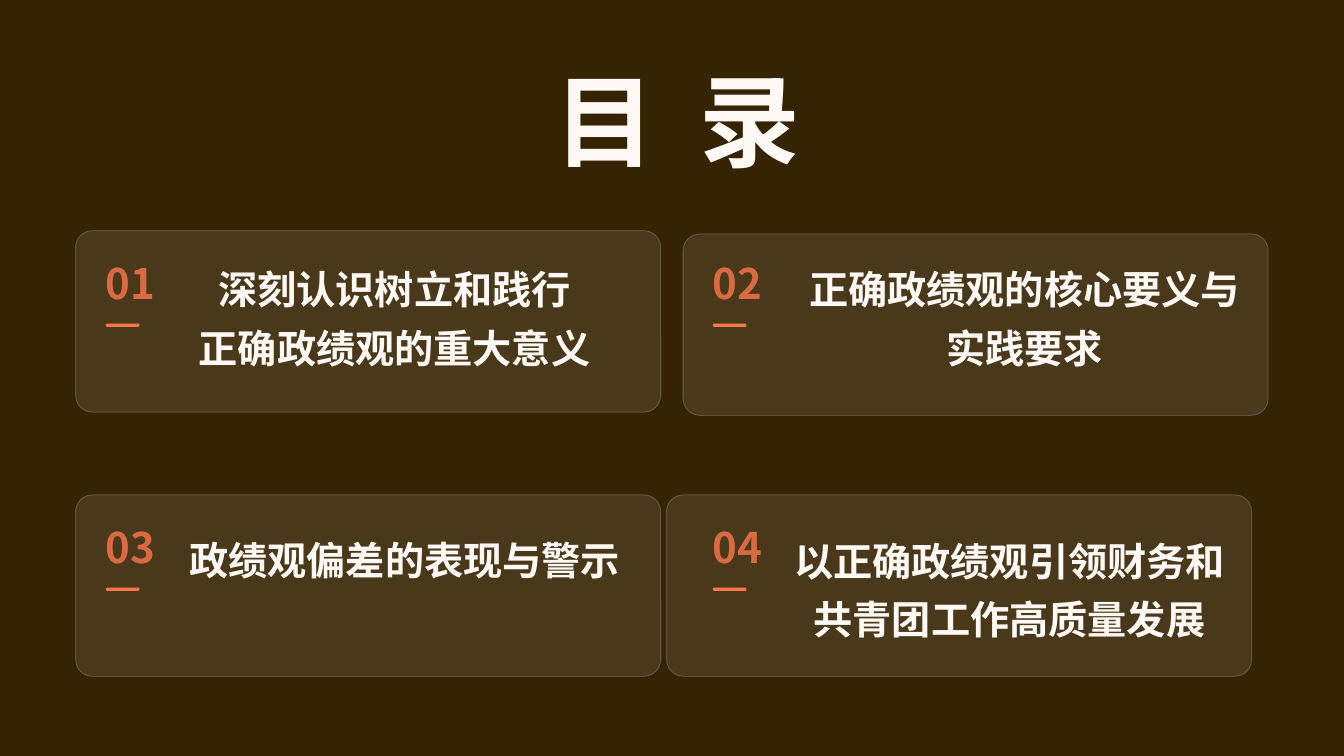
from lxml import etree
from pptx import Presentation
from pptx.dml.color import RGBColor
from pptx.enum.shapes import MSO_SHAPE
from pptx.enum.text import MSO_ANCHOR, MSO_AUTO_SIZE, PP_ALIGN
from pptx.oxml.ns import qn
from pptx.util import Pt

COLORS = {"background": "352301", "text": "FFF9F5", "accent": "FF774D",
          "card": "FFFFFF", "shadow": "3C160E"}
FONT = "Noto Sans CJK SC"
ROUNDED = MSO_SHAPE.ROUNDED_RECTANGLE
LEFT, CENTER = PP_ALIGN.LEFT, PP_ALIGN.CENTER
TOP = MSO_ANCHOR.TOP
NO_AUTOFIT = MSO_AUTO_SIZE.NONE

TITLE_BOX = (376, 41.8, 216, 37.4)
CARD_WIDTH, CARD_HEIGHT, CARD_RADIUS = 418, 129.6, 12
COLUMNS = (75.6, 509.2)
ROWS = (190.1, 378.7)
ENTRIES = [
    ((54, 164.8), (120.2, 181.4), ["深刻认识树立和践行", "正确政绩观的重大意义"]),
    ((487.9, 167.1), (570.2, 181.4), ["正确政绩观的核心要义与实践要求"]),
    ((54, 353.5), (127.4, 374.4), ["政绩观偏差的表现与警示"]),
    ((476.1, 353.5), (559.4, 375.1), ["以正确政绩观引领财务和", "共青团工作高质量发展"]),
]


def rgb(name):
    """Return the named palette colour."""
    return RGBColor.from_string(COLORS[name])


def set_alpha(element, percent):
    """Make the first solid colour below an element translucent."""
    color = element.find(".//" + qn("a:srgbClr"))
    etree.SubElement(color, qn("a:alpha")).set("val", str(percent * 1000))


def write_text(shape, lines, size, color, alignment, line_spacing):
    """Fill a shape with bold lines of text, without margins."""
    frame = shape.text_frame
    frame.word_wrap = True
    frame.auto_size = NO_AUTOFIT
    frame.vertical_anchor = TOP
    frame.margin_left = frame.margin_top = frame.margin_right = frame.margin_bottom = 0
    frame.text = "\n".join(lines)
    for paragraph in frame.paragraphs:
        paragraph.alignment = alignment
        paragraph.line_spacing = line_spacing
        paragraph.space_before = Pt(0)
        font = paragraph.font
        font.size = Pt(size)
        font.bold = True
        font.color.rgb = rgb(color)
        font.name = FONT
        east_asian = etree.SubElement(font._element, qn("a:ea"))
        east_asian.set("typeface", FONT)


def add_title(slide, box):
    """Place the slide title, with widened letter spacing, in its box."""
    title = slide.shapes.title
    title.left, title.top, title.width, title.height = map(Pt, box)
    write_text(title, ["目 录"], 72, "text", CENTER, 1.0)
    title.text_frame.paragraphs[0].font._element.set("spc", "800")


def add_rounded(slide, box, radius, color):
    """Add a filled rectangle with rounded corners."""
    shape = slide.shapes.add_shape(ROUNDED, *map(Pt, box))
    shape.adjustments[0] = radius / min(box[2:])
    shape.shadow.inherit = False
    shape.fill.solid()
    shape.fill.fore_color.rgb = rgb(color)
    shape.line.fill.background()
    return shape


def add_card(slide, box):
    """Add a translucent card with a thin outline and a hard shadow."""
    card = add_rounded(slide, box, CARD_RADIUS, "card")
    set_alpha(card._element.spPr, 10)
    card.line.color.rgb = rgb("card")
    card.line.width = Pt(0.75)
    set_alpha(card._element.spPr.find(qn("a:ln")), 18)
    effects = card._element.spPr.find(qn("a:effectLst"))
    shadow = etree.SubElement(effects, qn("a:outerShdw"), blurRad="0",
                              dist=str(Pt(1.5)), dir="5400000")
    etree.SubElement(shadow, qn("a:srgbClr"), val=COLORS["shadow"])
    set_alpha(shadow, 35)


def add_number(slide, box, number):
    """Add a two-digit number with a short bar under it."""
    left, top, width, height = box
    label = slide.shapes.add_textbox(*map(Pt, box))
    write_text(label, [f"{number:02d}"], 30, "accent", LEFT, 0.83)
    set_alpha(label.text_frame.paragraphs[0].font._element, 80)
    add_rounded(slide, (left, top + 41, 24, 2.4), 1.2, "accent")


def add_entry_text(slide, box, lines):
    """Add the centred heading of one entry."""
    write_text(slide.shapes.add_textbox(*map(Pt, box)), lines, 28, "text", CENTER, 1.25)


def build_contents(presentation):
    """Build the contents slide with its title and four numbered cards."""
    slide = presentation.slides.add_slide(presentation.slide_layouts[5])
    slide.background.fill.solid()
    slide.background.fill.fore_color.rgb = rgb("background")
    add_title(slide, TITLE_BOX)
    for index, (card_corner, text_corner, lines) in enumerate(ENTRIES):
        row, column = divmod(index, 2)
        add_card(slide, (*card_corner, CARD_WIDTH, CARD_HEIGHT))
        add_number(slide, (COLUMNS[column], ROWS[row], 375, 33), index + 1)
        add_entry_text(slide, (*text_corner, 323.3, 27.4), lines)


def main():
    """Create and save the presentation."""
    presentation = Presentation()
    presentation.slide_width, presentation.slide_height = Pt(960), Pt(540)
    build_contents(presentation)
    presentation.save("out.pptx")


if __name__ == "__main__":
    main()
